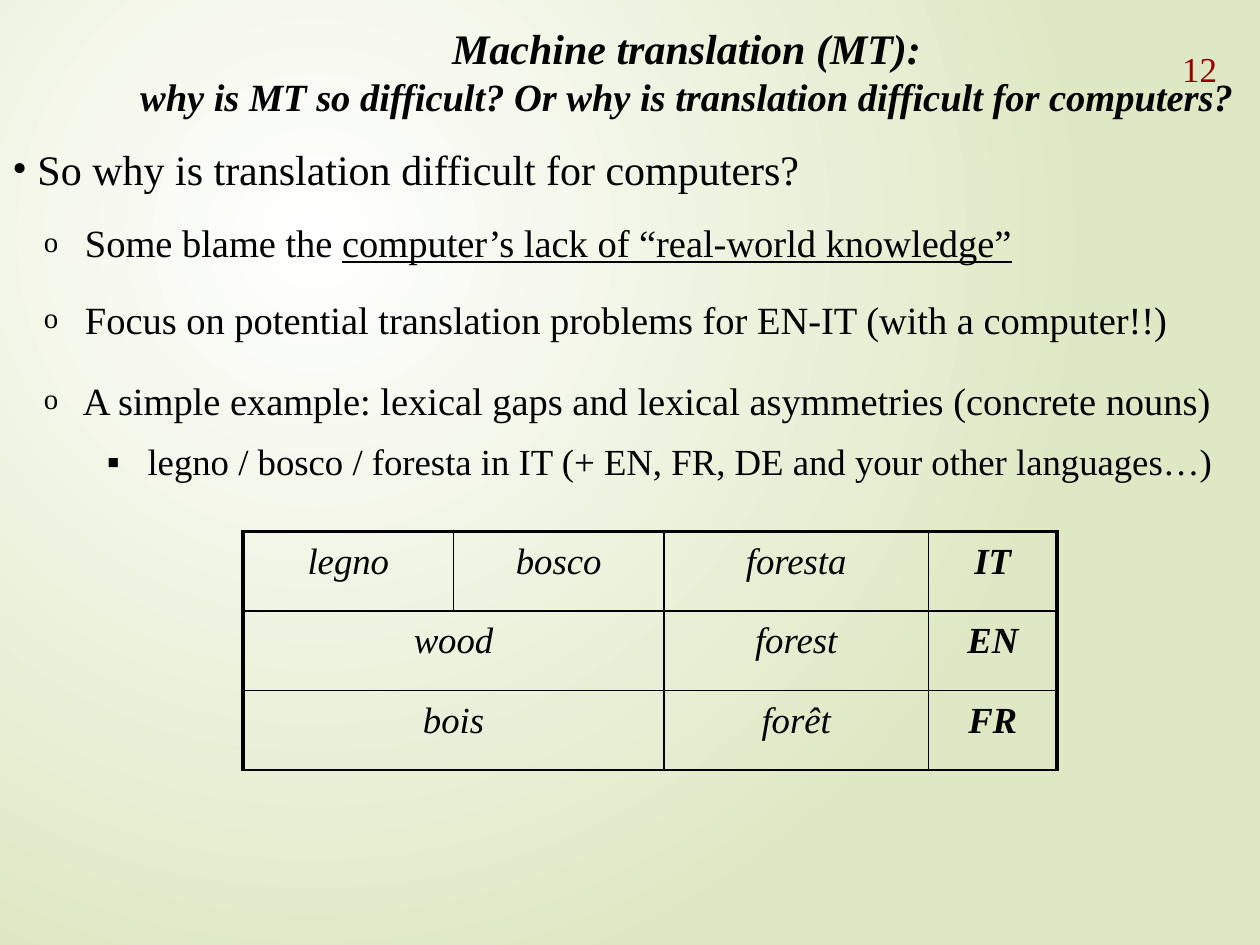
"""Build a slide on lexical gaps in machine translation, with a word table."""
import lxml.etree
import pptx
import pptx.dml.color
import pptx.enum.text
import pptx.oxml
import pptx.oxml.ns
import pptx.util

Inches, Pt = pptx.util.Inches, pptx.util.Pt
Align, Anchor = pptx.enum.text.PP_ALIGN, pptx.enum.text.MSO_ANCHOR
qn = pptx.oxml.ns.qn
COLORS = {"ink": "000000", "page": "990000", "glow": "FFFFFF", "edge": "DFE8C4"}
FACE = "Times New Roman"


def write(para, text, size, color="ink", **form):
    run = para.add_run()
    run.text = text
    form.update(name=FACE, size=Pt(size))
    for key, value in form.items():
        setattr(run.font, key, value)
    run.font.color.rgb = pptx.dml.color.RGBColor.from_string(COLORS[color])


def add_box(left, top, width, height):
    box = slide.shapes.add_textbox(Inches(left), Inches(top), Inches(width), Inches(height))
    box.text_frame.word_wrap = True
    return box.text_frame


deck = pptx.Presentation()
deck.slide_width, deck.slide_height = Inches(10), Inches(7.5)
slide = deck.slides.add_slide(deck.slide_layouts[6])

fill = slide.background.fill
fill.solid()
solid = slide.background._cSld.find(".//" + qn("a:solidFill"))
grad = pptx.oxml.parse_xml(
    f'<a:gradFill {pptx.oxml.ns.nsdecls("a")} rotWithShape="1"><a:gsLst>'
    f'<a:gs pos="0"><a:srgbClr val="{COLORS["glow"]}"/></a:gs>'
    f'<a:gs pos="100000"><a:srgbClr val="{COLORS["edge"]}"/></a:gs></a:gsLst>'
    '<a:path path="circle"><a:fillToRect l="50000" t="50000" r="100000" b="100000"/>'
    "</a:path></a:gradFill>")
solid.getparent().replace(solid, grad)

page = add_box(8.78, 0.28, 0.88, 0.52)
for side in ("left", "top", "right", "bottom"):
    setattr(page, "margin_" + side, 0)
page.vertical_anchor = Anchor.MIDDLE
page.paragraphs[0].alignment = Align.RIGHT
write(page.paragraphs[0], "12", 20, "page")

points = [
    (0, 24, 1.6, "•", [" So why is translation difficult for computers?"]),
    (1, 22, 1.1, "o", [" Some blame the ", "computer’s lack of “real-world knowledge”"]),
    (1, 22, 1.2, "o", [" Focus on potential translation problems for EN-IT (with a computer!!)"]),
    (1, 22, 1.3, "o", [" A simple example: lexical gaps and lexical asymmetries (concrete nouns)"]),
    (2, 21, 0.9, "▪", [" legno / bosco / foresta in IT (+ EN, FR, DE and your other languages…)"]),
]
body = add_box(0, 0.85, 10, 3.1)
for row, (level, size, space, mark, parts) in enumerate(points):
    para = body.add_paragraph() if row else body.paragraphs[0]
    form = {"level": level, "line_spacing": space, "space_before": Pt(12 if row else 0)}
    for key, value in form.items():
        setattr(para, key, value)
    for spot, part in enumerate(parts):
        write(para, part, size, underline=spot == 1)
    props = para._p.get_or_add_pPr()
    props.set("marL", str(Inches(0.5 * level)))
    props.set("indent", str(Inches(-0.25 if level else 0)))
    if mark == "o":
        lxml.etree.SubElement(props, qn("a:buSzPct")).set("val", "75000")
    lxml.etree.SubElement(props, qn("a:buFont")).set("typeface", FACE)
    lxml.etree.SubElement(props, qn("a:buChar")).set("char", mark)

head = add_box(0.93, 0.13, 9.04, 0.87).paragraphs[0]
head.alignment = Align.CENTER
write(head, "Machine translation (MT):", 24, bold=True, italic=True)
head.add_line_break()
write(head, "why is MT so difficult? Or why is translation difficult for computers?",
      22, bold=True, italic=True)

words = [("legno", "bosco", "foresta", "IT"),
         ("wood", "", "forest", "EN"),
         ("bois", "", "forêt", "FR")]
frame = slide.shapes.add_table(3, 4, Inches(1.93), Inches(4.22), Inches(6.46), Inches(1.89))
table = frame.table
table.first_row = table.horz_banding = False
for col, width in enumerate((1.67, 1.67, 2.1, 1.02)):
    table.columns[col].width = Inches(width)
for row, line in enumerate(words):
    table.rows[row].height = Inches(0.63)
    if row:
        table.cell(row, 0).merge(table.cell(row, 1))
    for col, word in enumerate(line):
        cell = table.cell(row, col)
        for side in ("left", "top", "right", "bottom"):
            setattr(cell, "margin_" + side, Inches(0.08))
        if word:
            para = cell.text_frame.paragraphs[0]
            para.alignment = Align.CENTER
            write(para, word, 21, italic=True, bold=col == 3)
        props = cell._tc.get_or_add_tcPr()
        thick = {"L": col == 0, "R": col == 3, "T": row == 0, "B": False}
        for side, heavy in thick.items():
            edge = lxml.etree.SubElement(props, qn("a:ln" + side))
            edge.set("w", str(Pt(2.25 if heavy else 1)))
            paint = lxml.etree.SubElement(edge, qn("a:solidFill"))
            lxml.etree.SubElement(paint, qn("a:srgbClr")).set("val", COLORS["ink"])
        cell.fill.background()

deck.save("out.pptx")
